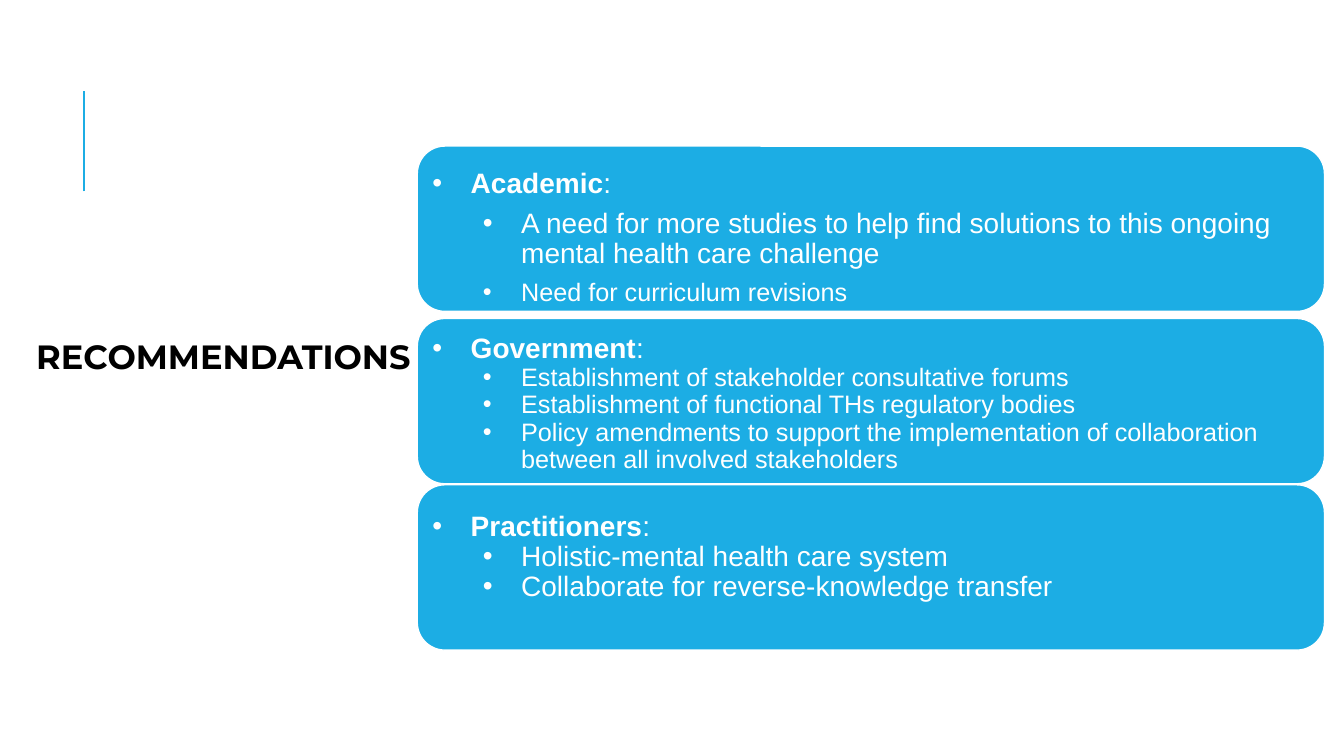
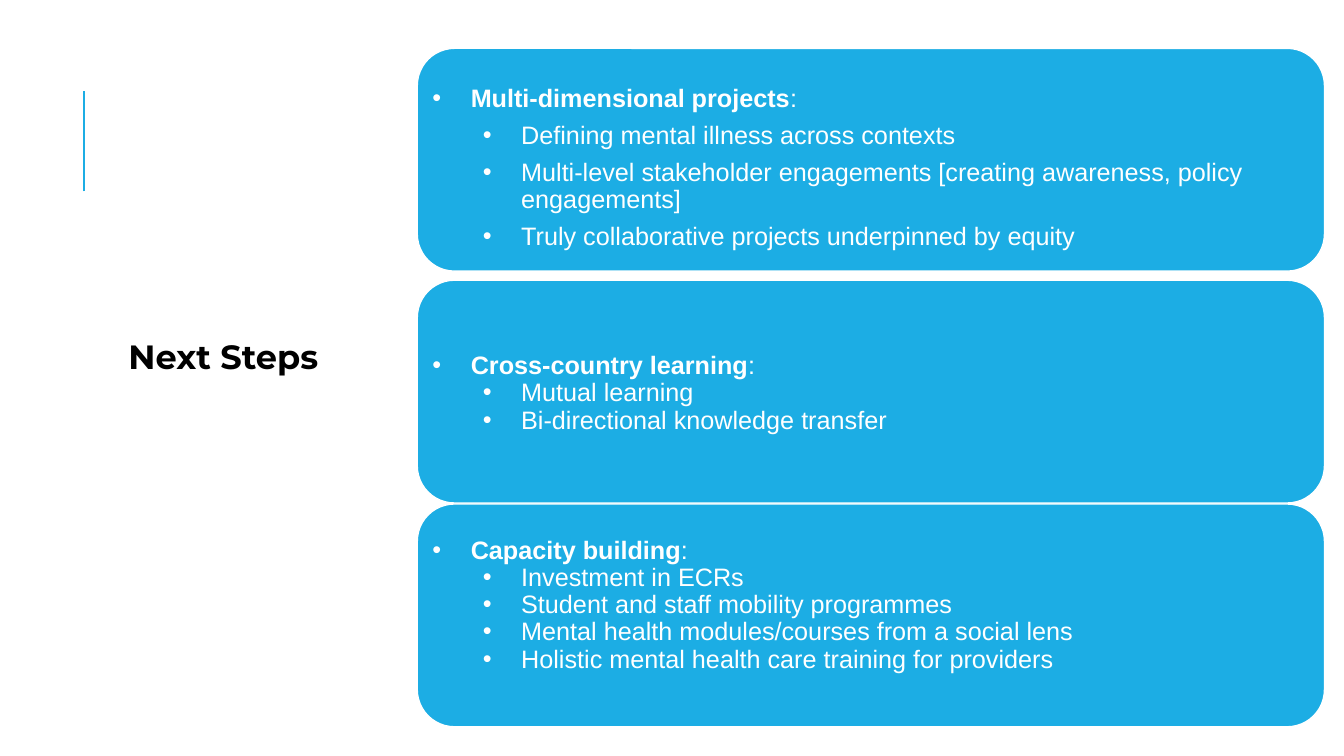
from dataclasses import dataclass

from lxml.etree import SubElement
from pptx import Presentation
from pptx.dml.color import RGBColor
from pptx.enum.shapes import MSO_CONNECTOR, MSO_SHAPE
from pptx.enum.text import MSO_ANCHOR, PP_ALIGN
from pptx.oxml.ns import qn
from pptx.util import Inches, Pt


@dataclass(frozen=True)
class Theme:
    accent: RGBColor = RGBColor.from_string("1CADE4")
    light: RGBColor = RGBColor.from_string("FFFFFF")
    dark: RGBColor = RGBColor.from_string("000000")
    title_font: str = "Montserrat"
    body_font: str = "Arial"
    title_size: int = 24
    large: int = 20
    medium: int = 18
    line_spacing: float = 0.9
    paragraph_gap: int = 7
    corner: float = 0.167


theme = Theme()


def write_text(paragraph, text, *, size, font=theme.body_font, color=theme.light, bold=False):
    paragraph.line_spacing = theme.line_spacing
    run = paragraph.add_run()
    run.text = text
    run.font.size = Pt(size)
    run.font.name = font
    run.font.color.rgb = color
    run.font.bold = bold


def add_bullet(paragraph, level, gap):
    paragraph.level = level
    paragraph.alignment = PP_ALIGN.LEFT
    paragraph.space_before = Pt(0)
    paragraph.space_after = Pt(gap)
    properties = paragraph._p.get_or_add_pPr()
    properties.set("marL", str(Inches(0.38 + 0.5 * level)))
    properties.set("indent", str(-Inches(0.38)))
    SubElement(properties, qn("a:buFont")).set("typeface", theme.body_font)
    SubElement(properties, qn("a:buChar")).set("char", "•")


presentation = Presentation()
presentation.slide_width = Inches(13.33)
presentation.slide_height = Inches(7.5)
column = presentation.slide_width / 100
row = presentation.slide_height / 100

slides = [
    {
        "title": "RECOMMENDATIONS",
        "card_rows": 21.87,
        "cards": [
            {
                "top": 19.33, "text_top": 3.07, "gap": theme.paragraph_gap,
                "heading": "Academic", "heading_size": theme.large,
                "points": [
                    ("A need for more studies to help find solutions to this ongoing mental health care challenge", theme.large),
                    ("Need for curriculum revisions", theme.medium),
                ],
            },
            {
                "top": 42.13, "text_top": 2.13, "gap": 0,
                "heading": "Government", "heading_size": theme.large,
                "points": [
                    ("Establishment of stakeholder consultative forums", theme.medium),
                    ("Establishment of functional THs regulatory bodies", theme.medium),
                    ("Policy amendments to support the implementation of collaboration between all involved stakeholders", theme.medium),
                ],
            },
            {
                "top": 64.13, "text_top": 3.6, "gap": 0,
                "heading": "Practitioners", "heading_size": theme.large,
                "points": [
                    ("Holistic-mental health care system", theme.large),
                    ("Collaborate for reverse-knowledge transfer", theme.large),
                ],
            },
        ],
    },
    {
        "title": "Next Steps",
        "card_rows": 29.47,
        "cards": [
            {
                "top": 6.4, "text_top": 4.93, "gap": theme.paragraph_gap,
                "heading": "Multi-dimensional projects", "heading_size": theme.medium,
                "points": [
                    ("Defining mental illness across contexts", theme.medium),
                    ("Multi-level stakeholder engagements [creating awareness, policy engagements]", theme.medium),
                    ("Truly collaborative projects underpinned by equity", theme.medium),
                ],
            },
            {
                "top": 37.07, "text_top": 9.6, "gap": 0,
                "heading": "Cross-country learning", "heading_size": theme.medium,
                "points": [
                    ("Mutual learning", theme.medium),
                    ("Bi-directional knowledge transfer", theme.medium),
                ],
            },
            {
                "top": 66.67, "text_top": 4.4, "gap": 0,
                "heading": "Capacity building", "heading_size": theme.medium,
                "points": [
                    ("Investment in ECRs", theme.medium),
                    ("Student and staff mobility programmes", theme.medium),
                    ("Mental health modules/courses from a social lens", theme.medium),
                    ("Holistic mental health care training for providers", theme.medium),
                ],
            },
        ],
    },
]

for content in slides:
    slide = presentation.slides.add_slide(presentation.slide_layouts[6])

    accent_line = slide.shapes.add_connector(
        MSO_CONNECTOR.STRAIGHT,
        int(6.22 * column), int(25.33 * row), int(6.22 * column), int(12 * row),
    )
    accent_line.line.color.rgb = theme.accent
    accent_line.line.width = Pt(1.5)
    SubElement(accent_line._element.spPr, qn("a:effectLst"))

    title = slide.shapes.add_textbox(
        int(0.75 * column), int(21.6 * row), int(31.73 * column), int(51.6 * row)
    )
    title.text_frame.word_wrap = True
    title.text_frame.vertical_anchor = MSO_ANCHOR.MIDDLE
    paragraph = title.text_frame.paragraphs[0]
    paragraph.alignment = PP_ALIGN.CENTER
    write_text(paragraph, content["title"], size=theme.title_size,
               font=theme.title_font, color=theme.dark, bold=True)

    card_height = int(content["card_rows"] * row)
    corner_inset = int(card_height * theme.corner * 0.29)
    for card in content["cards"]:
        shape = slide.shapes.add_shape(
            MSO_SHAPE.ROUNDED_RECTANGLE,
            int(31.05 * column), int(card["top"] * row), int(67.5 * column), card_height,
        )
        shape.adjustments[0] = theme.corner
        shape.shadow.inherit = False
        shape.fill.solid()
        shape.fill.fore_color.rgb = theme.accent
        shape.line.color.rgb = theme.light
        shape.line.width = Pt(1)

        frame = shape.text_frame
        frame.word_wrap = True
        frame.vertical_anchor = MSO_ANCHOR.TOP
        frame.margin_left = frame.margin_right = Inches(0.15) - corner_inset
        frame.margin_top = int(card["text_top"] * row) - corner_inset
        frame.margin_bottom = 0

        heading = frame.paragraphs[0]
        write_text(heading, card["heading"], size=card["heading_size"], bold=True)
        write_text(heading, ":", size=card["heading_size"])
        add_bullet(heading, 0, card["gap"])
        for text, size in card["points"]:
            paragraph = frame.add_paragraph()
            write_text(paragraph, text, size=size)
            add_bullet(paragraph, 1, card["gap"])

presentation.save("out.pptx")
